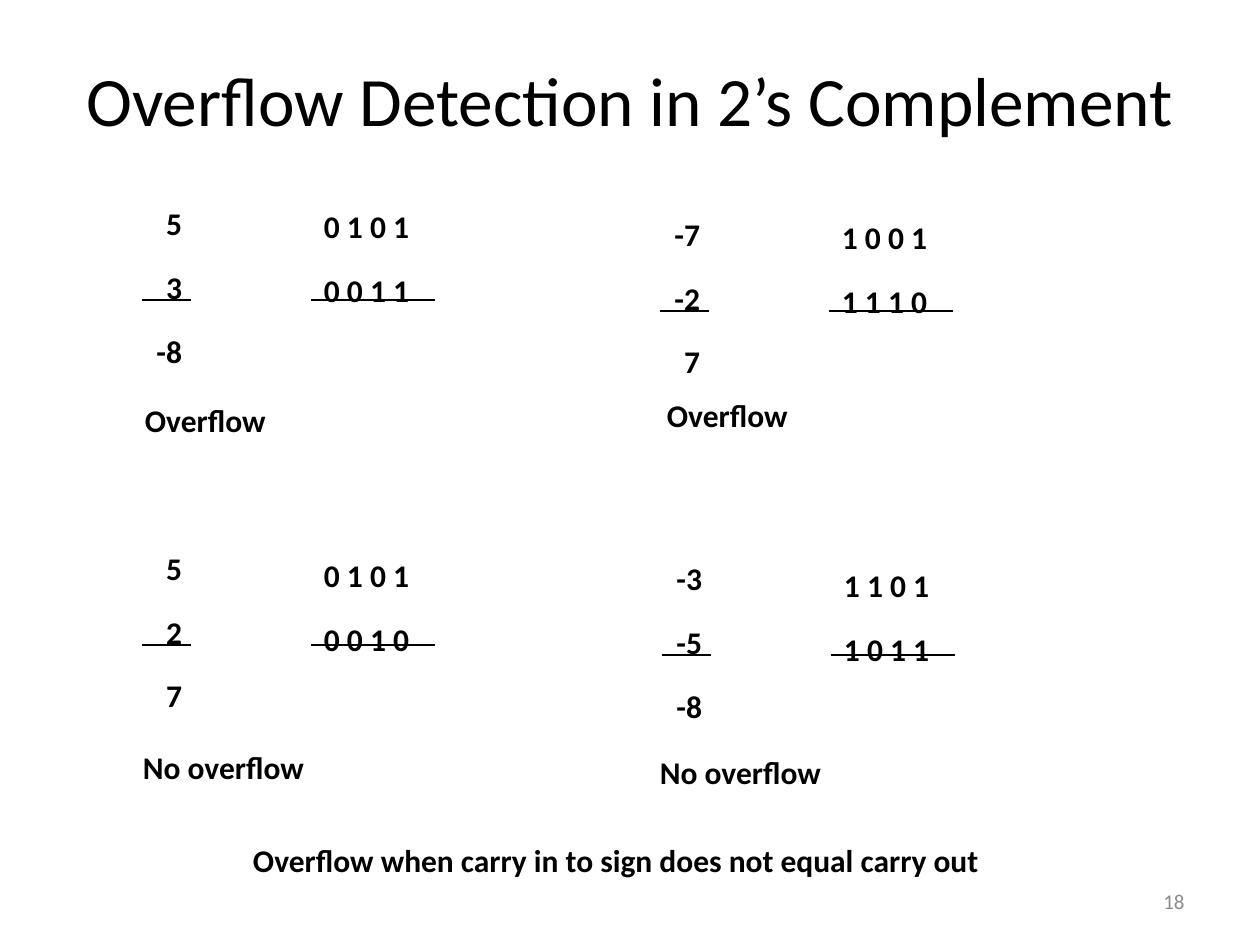
"""Build a slide on detecting overflow in two's complement addition."""
from collections import namedtuple

from lxml import etree
from pptx import Presentation
from pptx import util as u
from pptx.dml.color import RGBColor
from pptx.enum import shapes, text
from pptx.oxml.ns import qn

SCALE = 914400 / 126
FONT = "Calibri"
COLOURS = {"ink": "000000", "number": "8C8C8C", "paper": "FFFFFF"}
ALIGN = text.PP_ALIGN

Sum = namedtuple(
    "Sum", "left rule_y operands binary binary_rise verdict verdict_at")
SUMS = [
    Sum(142, 300, ["5", "3", "-8"], ["0 1 0 1", "0 0 1 1"], 91,
        "Overflow", (136, 403)),
    Sum(660, 311, ["-7", "-2", "7"], ["1 0 0 1", "1 1 1 0"], 91,
        "Overflow", (658, 398)),
    Sum(142, 645, ["5", "2", "7"], ["0 1 0 1", "0 0 1 0"], 87,
        "No overflow", (134, 750)),
    Sum(662, 655, ["-3", "-5", "-8"], ["1 1 0 1", "1 0 1 1"], 87,
        "No overflow", (651, 755)),
]


def px(length):
    """Turn pixels into EMU."""
    return u.Emu(round(length * SCALE))


def place(shape, left, top, width, height):
    """Set the position and size of a shape."""
    shape.left, shape.top = px(left), px(top)
    shape.width, shape.height = px(width), px(height)


def add_span(para, words, size, colour="ink", bold=False):
    """Add one formatted run to a paragraph."""
    span = para.add_run()
    span.text = words
    span.font.name = FONT
    span.font.size = u.Pt(size)
    span.font.bold = bold
    span.font.color.rgb = RGBColor.from_string(COLOURS[colour])


def set_title(page, words):
    """Place and fill the title placeholder."""
    title = page.shapes.title
    place(title, 63, -10, 1134, 157)
    frame = title.text_frame
    frame.auto_size = text.MSO_AUTO_SIZE.NONE
    frame.vertical_anchor = text.MSO_ANCHOR.BOTTOM
    para = frame.paragraphs[0]
    para.alignment = ALIGN.CENTER
    add_span(para, words, 39.6)


def add_lines(page, lines, left, top, width, align=ALIGN.LEFT):
    """Add a box of bold lines spaced one line apart."""
    box = page.shapes.add_textbox(
        px(left), px(top), px(width), px(39 + 64 * (len(lines) - 1)))
    frame = box.text_frame
    frame.word_wrap = True
    frame.margin_left = frame.margin_right = px(9)
    frame.margin_top = frame.margin_bottom = px(4)
    for index, words in enumerate(lines):
        para = frame.add_paragraph() if index else frame.paragraphs[0]
        para.alignment = align
        para.line_spacing = 0.85
        para.space_before = u.Pt(18 if index else 0)
        add_span(para, words, 18, bold=True)


def add_rule(page, left, top, width):
    """Draw a thin horizontal line."""
    rule = page.shapes.add_connector(
        shapes.MSO_CONNECTOR.STRAIGHT,
        px(left), px(top), px(left + width), px(top))
    rule.line.color.rgb = RGBColor.from_string(COLOURS["ink"])
    rule.line.width = u.Pt(1)
    etree.SubElement(rule._element.spPr, qn("a:effectLst"))


def add_sum(page, item):
    """Add a decimal and binary addition with its verdict."""
    add_lines(page, item.operands, item.left, item.rule_y - 94, 49,
              ALIGN.RIGHT)
    add_lines(page, item.binary, item.left + 173,
              item.rule_y - item.binary_rise, 125)
    add_rule(page, item.left, item.rule_y, 49)
    add_rule(page, item.left + 169, item.rule_y, 124)
    add_lines(page, [item.verdict], *item.verdict_at, 200)


def add_page_number(page, number):
    """Add the slide number at the lower right."""
    box = page.shapes.add_textbox(px(903), px(876), px(294), px(50))
    frame = box.text_frame
    frame.word_wrap = True
    frame.vertical_anchor = text.MSO_ANCHOR.MIDDLE
    para = frame.paragraphs[0]
    para.alignment = ALIGN.RIGHT
    add_span(para, number, 12, "number")


def main():
    """Build and save the deck."""
    deck = Presentation()
    deck.slide_width, deck.slide_height = px(1260), px(945)
    page = deck.slides.add_slide(deck.slide_layouts[5])
    page.background.fill.solid()
    page.background.fill.fore_color.rgb = RGBColor.from_string(
        COLOURS["paper"])
    set_title(page, "Overflow Detection in 2’s Complement")
    for item in SUMS:
        add_sum(page, item)
    add_lines(page, ["Overflow when carry in to sign does not equal carry out"],
              244, 843, 850)
    add_page_number(page, "18")
    deck.save("out.pptx")


if __name__ == "__main__":
    main()
